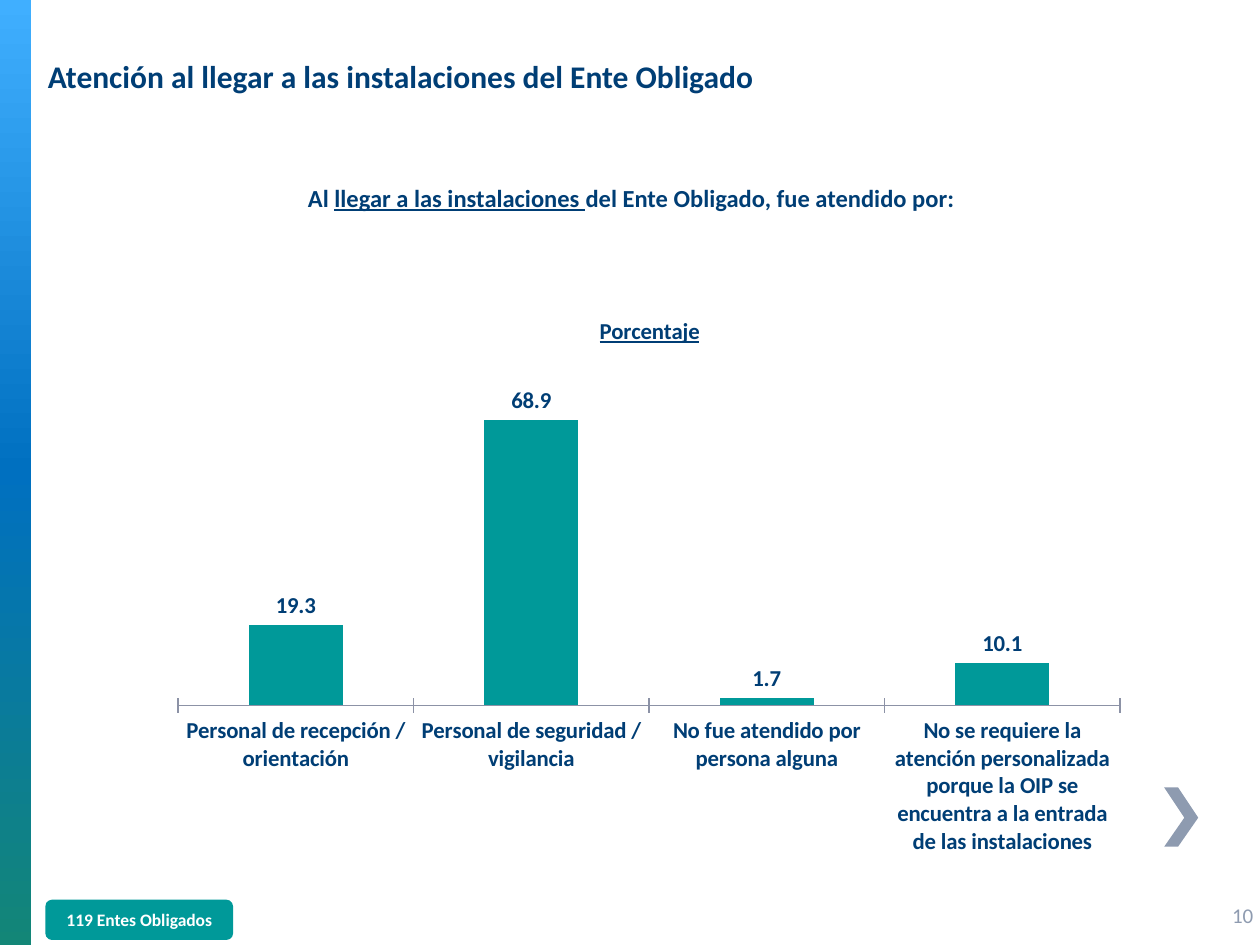
"""Builds the slide on who attended visitors arriving at the Ente Obligado."""
import copy
import dataclasses

import lxml.etree
import pptx
import pptx.chart.data
import pptx.dml.color
import pptx.enum.chart
import pptx.enum.shapes
import pptx.enum.text
import pptx.oxml.ns
import pptx.util

Inches = pptx.util.Inches
Pt = pptx.util.Pt
RGB = pptx.dml.color.RGBColor.from_string
qn = pptx.oxml.ns.qn
Align = pptx.enum.text.PP_ALIGN
Shape = pptx.enum.shapes.MSO_SHAPE


@dataclasses.dataclass(frozen=True)
class Theme:
    """Colours, font and type sizes of the slide."""
    font: str = "Calibri"
    navy: str = "003E75"
    teal: str = "009999"
    grey: str = "8E9BB0"
    axis: str = "8C92A6"
    white: str = "FFFFFF"
    band: tuple = ((0, "40AFFF"), (0.5, "0070C0"), (1, "138677"))
    heading: int = 18
    question: int = 14
    chart: int = 13
    number: int = 12
    badge: int = 10


THEME = Theme()
ANSWERS = {
    "Personal de recepción / orientación": 19.3,
    "Personal de seguridad / vigilancia": 68.9,
    "No fue atendido por persona alguna": 1.7,
    "No se requiere la atención personalizada porque la OIP se "
    "encuentra a la entrada de las instalaciones": 10.1,
}
PLOT_AREA = {"x": 0.034, "y": 0.141, "w": 0.931, "h": 0.584}


def box(left, top, width, height):
    """Return a position and size given in inches."""
    return Inches(left), Inches(top), Inches(width), Inches(height)


def style_font(font, size, color, bold=True):
    """Apply the theme font with a size and colour."""
    font.name = THEME.font
    font.size = Pt(size)
    font.bold = bold
    font.color.rgb = RGB(color)


def write(frame, runs, size, color, align=Align.LEFT, bold=True):
    """Fill a text frame from (text, underlined) runs."""
    frame.word_wrap = True
    frame.auto_size = pptx.enum.text.MSO_AUTO_SIZE.NONE
    frame.vertical_anchor = pptx.enum.text.MSO_ANCHOR.MIDDLE
    line = frame.paragraphs[0]
    line.alignment = align
    for text, underlined in runs:
        run = line.add_run()
        run.text = text
        style_font(run.font, size, color, bold)
        run.font.underline = underlined


def add_heading(slide, text):
    """Place and fill the title placeholder."""
    heading = slide.shapes.title
    heading.left, heading.top, heading.width, heading.height = box(0.28, 0.13, 9.29, 0.94)
    write(heading.text_frame, [(text, False)], THEME.heading, THEME.navy)


def add_text(slide, place, runs, size, color, **options):
    """Add a text box."""
    label = slide.shapes.add_textbox(*place)
    write(label.text_frame, runs, size, color, **options)


def add_side_band(slide):
    """Add the vertical gradient band on the left edge."""
    band = slide.shapes.add_shape(Shape.RECTANGLE, *box(0, 0, 0.25, 7.5))
    band.shadow.inherit = False
    band.line.fill.background()
    band.fill.gradient()
    band.fill.gradient_angle = 270
    stop_list = next(band._element.iter(qn("a:gsLst")))
    stop_list.append(copy.deepcopy(stop_list[-1]))
    for stop, (position, color) in zip(band.fill.gradient_stops, THEME.band):
        stop.position = position
        stop.color.rgb = RGB(color)


def add_chevron(slide):
    """Add the grey arrow at the lower right."""
    builder = slide.shapes.build_freeform(Inches(9.35), Inches(6.25), scale=1.0)
    corners = [(9.24, 6.25), (9.4, 6.49), (9.24, 6.72), (9.35, 6.72), (9.51, 6.49)]
    builder.add_line_segments([(Inches(x), Inches(y)) for x, y in corners])
    chevron = builder.convert_to_shape()
    chevron.shadow.inherit = False
    chevron.fill.solid()
    chevron.fill.fore_color.rgb = RGB(THEME.grey)
    chevron.line.fill.background()


def add_badge(slide, text):
    """Add the rounded badge with the number of bodies."""
    badge = slide.shapes.add_shape(Shape.ROUNDED_RECTANGLE, *box(0.36, 7.14, 1.49, 0.32))
    badge.shadow.inherit = False
    badge.fill.solid()
    badge.fill.fore_color.rgb = RGB(THEME.teal)
    badge.line.fill.background()
    write(badge.text_frame, [(text, False)], THEME.badge, THEME.white, Align.CENTER)


def fix_plot_area(chart):
    """Set the inner plot area as fractions of the chart."""
    plot_area = next(chart._chartSpace.iter(qn("c:plotArea")))
    for old in plot_area.findall(qn("c:layout")):
        plot_area.remove(old)
    layout = lxml.etree.Element(qn("c:layout"))
    manual = lxml.etree.SubElement(layout, qn("c:manualLayout"))
    settings = {"layoutTarget": "inner", "xMode": "edge", "yMode": "edge", **PLOT_AREA}
    for name, value in settings.items():
        lxml.etree.SubElement(manual, qn(f"c:{name}")).set("val", str(value))
    plot_area.insert(0, layout)


def style_axes(chart):
    """Format the category axis and hide the value axis."""
    answers = chart.category_axis
    answers.major_tick_mark = pptx.enum.chart.XL_TICK_MARK.CROSS
    answers.format.line.color.rgb = RGB(THEME.axis)
    answers.format.line.width = Pt(0.75)
    style_font(answers.tick_labels.font, THEME.chart, THEME.navy)
    percent = chart.value_axis
    percent.minimum_scale, percent.maximum_scale = 0, 80
    percent.has_major_gridlines = False
    percent.visible = False


def add_answer_chart(slide):
    """Add the column chart of answers."""
    data = pptx.chart.data.CategoryChartData(number_format="###0.0")
    data.categories = list(ANSWERS)
    data.add_series("Porcentaje", list(ANSWERS.values()))
    column = pptx.enum.chart.XL_CHART_TYPE.COLUMN_CLUSTERED
    chart = slide.shapes.add_chart(column, *box(1.14, 2.33, 8.03, 4.51), data).chart
    style_font(chart.font, THEME.chart, THEME.navy)
    chart.has_legend = False
    chart.has_title = True
    chart.chart_title.include_in_layout = False
    caption = chart.chart_title.text_frame.paragraphs[0].add_run()
    caption.text = "Porcentaje"
    style_font(caption.font, THEME.chart, THEME.navy)
    caption.font.underline = True
    plot = chart.plots[0]
    plot.gap_width = 150
    plot.vary_by_categories = False
    columns = plot.series[0]
    columns.format.fill.solid()
    columns.format.fill.fore_color.rgb = RGB(THEME.teal)
    labels = columns.data_labels
    labels.show_value = True
    labels.number_format = "###0.0"
    labels.number_format_is_linked = False
    labels.position = pptx.enum.chart.XL_LABEL_POSITION.OUTSIDE_END
    style_font(labels.font, THEME.chart, THEME.navy)
    style_axes(chart)
    fix_plot_area(chart)


def main():
    """Build and save the slide."""
    deck = pptx.Presentation()
    deck.slide_width, deck.slide_height = Inches(10), Inches(7.5)
    slide = deck.slides.add_slide(deck.slide_layouts.get_by_name("Title Only"))
    add_side_band(slide)
    add_chevron(slide)
    add_text(slide, box(9.68, 7.06, 0.42, 0.4), [("10", False)],
             THEME.number, THEME.grey, bold=False)
    question = [("Al ", False), ("llegar a las instalaciones ", True),
                ("del Ente Obligado, fue atendido por:", False)]
    add_text(slide, box(1.74, 1.4, 6.54, 0.34), question,
             THEME.question, THEME.navy, align=Align.CENTER)
    add_answer_chart(slide)
    add_heading(slide, "Atención al llegar a las instalaciones del Ente Obligado")
    add_badge(slide, "119 Entes Obligados")
    deck.save("out.pptx")


if __name__ == "__main__":
    main()
